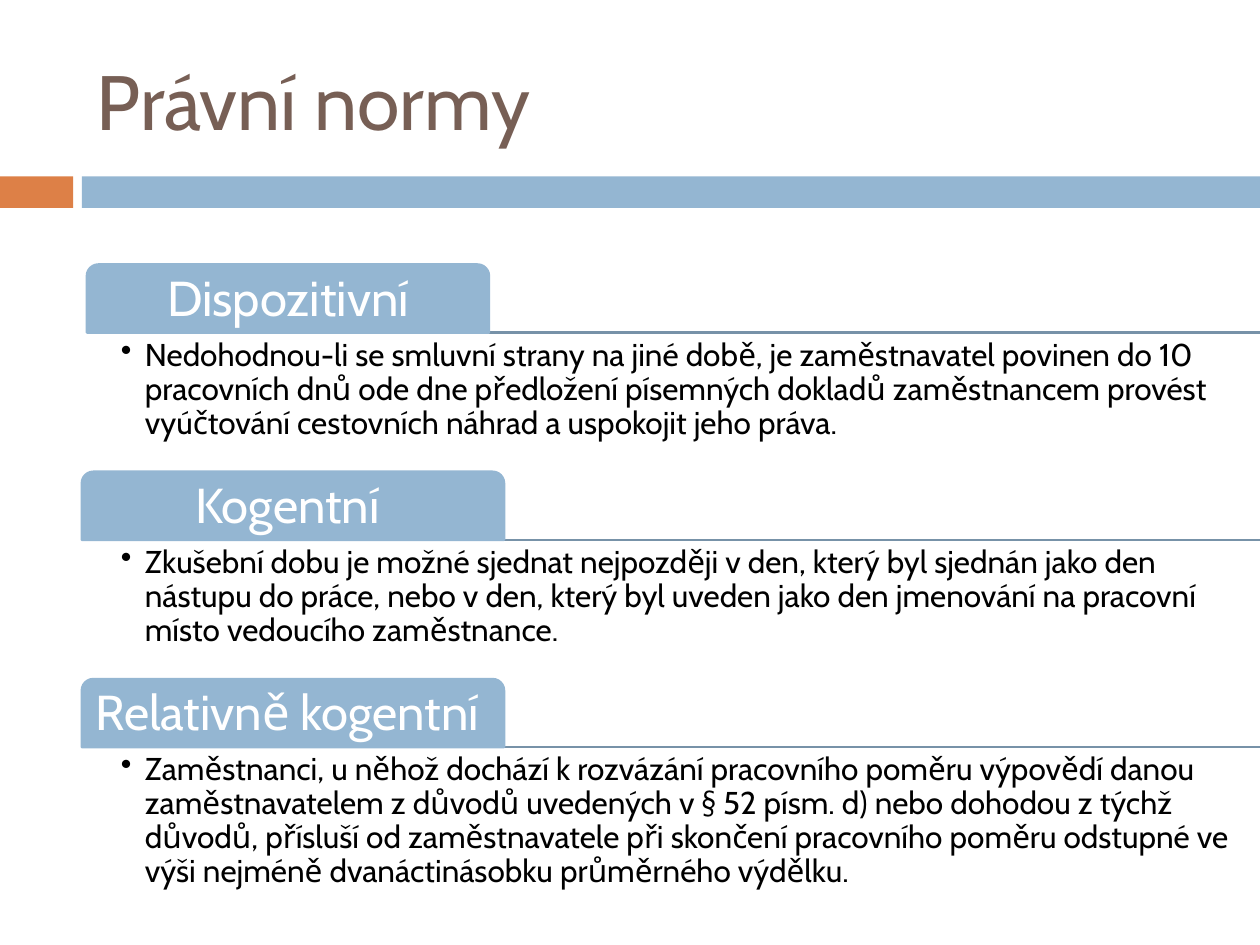
import pptx
import pptx.util
import pptx.dml.color
import pptx.enum.shapes
import pptx.enum.text
import pptx.oxml.ns
import lxml.etree

Inches = pptx.util.Inches
Pt = pptx.util.Pt
Shape = pptx.enum.shapes.MSO_SHAPE
Align = pptx.enum.text.PP_ALIGN
Anchor = pptx.enum.text.MSO_ANCHOR

COLOURS = {
    "title": "775F55", "accent": "DD8047", "bar": "94B6D2",
    "rule": "7792A8", "tab_text": "FFFFFF", "body": "000000",
}
NORMS = [
    ("Dispozitivní", 0.69, 3.19,
     "Nedohodnou-li se smluvní strany na jiné době, je zaměstnavatel povinen do 10 "
     "pracovních dnů ode dne předložení písemných dokladů zaměstnancem provést "
     "vyúčtování cestovních náhrad a uspokojit jeho práva."),
    ("Kogentní ", 0.65, 3.35,
     "Zkušební dobu je možné sjednat nejpozději v den, který byl sjednán jako den "
     "nástupu do práce, nebo v den, který byl uveden jako den jmenování na pracovní "
     "místo vedoucího zaměstnance."),
    ("Relativně kogentní ", 0.65, 3.35,
     "Zaměstnanci, u něhož dochází k rozvázání pracovního poměru výpovědí danou "
     "zaměstnavatelem z důvodů uvedených v § 52 písm. d) nebo dohodou z týchž důvodů, "
     "přísluší od zaměstnavatele při skončení pracovního poměru odstupné ve výši "
     "nejméně dvanáctinásobku průměrného výdělku."),
]
FIRST_RULE, ROW_PITCH, TAB_HEIGHT = 2.64, 1.645, 0.54


def colour(name):
    return pptx.dml.color.RGBColor.from_string(COLOURS[name])


def write(box, text, size, ink, inset, align=Align.LEFT, anchor=Anchor.MIDDLE, spacing=1.0):
    """Put one formatted paragraph into a shape and return it."""
    frame = box.text_frame
    frame.word_wrap = True
    frame.vertical_anchor = anchor
    frame.margin_left = frame.margin_right = Inches(inset)
    frame.margin_top = frame.margin_bottom = Inches(min(inset, 0.06))
    para = frame.paragraphs[0]
    para.alignment = align
    para.line_spacing = spacing
    span = para.add_run()
    span.text = text
    span.font.name = "Cabin"
    span.font.size = Pt(size)
    span.font.color.rgb = colour(ink)
    return para


deck = pptx.Presentation()
deck.slide_width, deck.slide_height = Inches(10), Inches(7.5)
page = deck.slides.add_slide(deck.slide_layouts[6])

# Title and the two-part band below it
for left, width, fill in [(0, 0.58, "accent"), (0.65, 9.35, "bar")]:
    band = page.shapes.add_shape(Shape.RECTANGLE, Inches(left), Inches(1.4),
                                 Inches(width), Inches(0.25))
    band.shadow.inherit = False
    band.fill.solid()
    band.fill.fore_color.rgb = colour(fill)
    band.line.fill.background()

title = page.shapes.add_textbox(Inches(0.67), Inches(0.25), Inches(8.92), Inches(1.08))
write(title, "Právní normy", 44, "title", 0.1)

# One row per kind of norm: rule, tab on the rule, bulleted text under it
for row, (name, left, width, description) in enumerate(NORMS):
    rule_y = Inches(FIRST_RULE + row * ROW_PITCH)

    rule = page.shapes.add_connector(pptx.enum.shapes.MSO_CONNECTOR.STRAIGHT,
                                     Inches(1.16), rule_y, deck.slide_width, rule_y)
    rule.line.color.rgb = colour("rule")
    rule.line.width = Pt(1.5)
    lxml.etree.SubElement(rule._element.spPr, pptx.oxml.ns.qn("a:effectLst"))

    tab = page.shapes.add_shape(Shape.ROUND_2_SAME_RECTANGLE, Inches(left),
                                rule_y - Inches(TAB_HEIGHT), Inches(width), Inches(TAB_HEIGHT))
    tab.adjustments[0] = 0.167
    tab.adjustments[1] = 0
    tab.shadow.inherit = False
    tab.fill.solid()
    tab.fill.fore_color.rgb = colour("bar")
    tab.line.color.rgb = colour("bar")
    tab.line.width = Pt(1.5)
    write(tab, name, 28, "tab_text", 0.06, align=Align.CENTER, spacing=0.9)

    body = page.shapes.add_textbox(Inches(0.91), rule_y, Inches(8.92), Inches(1.08))
    para = write(body, description, 18, "body", 0.05, anchor=Anchor.TOP, spacing=0.9)
    properties = para._p.get_or_add_pPr()
    properties.set("marL", str(Inches(0.19)))
    properties.set("indent", str(-Inches(0.19)))
    bullet = lxml.etree.SubElement(properties, pptx.oxml.ns.qn("a:buChar"))
    bullet.set("char", "•")

deck.save("out.pptx")
